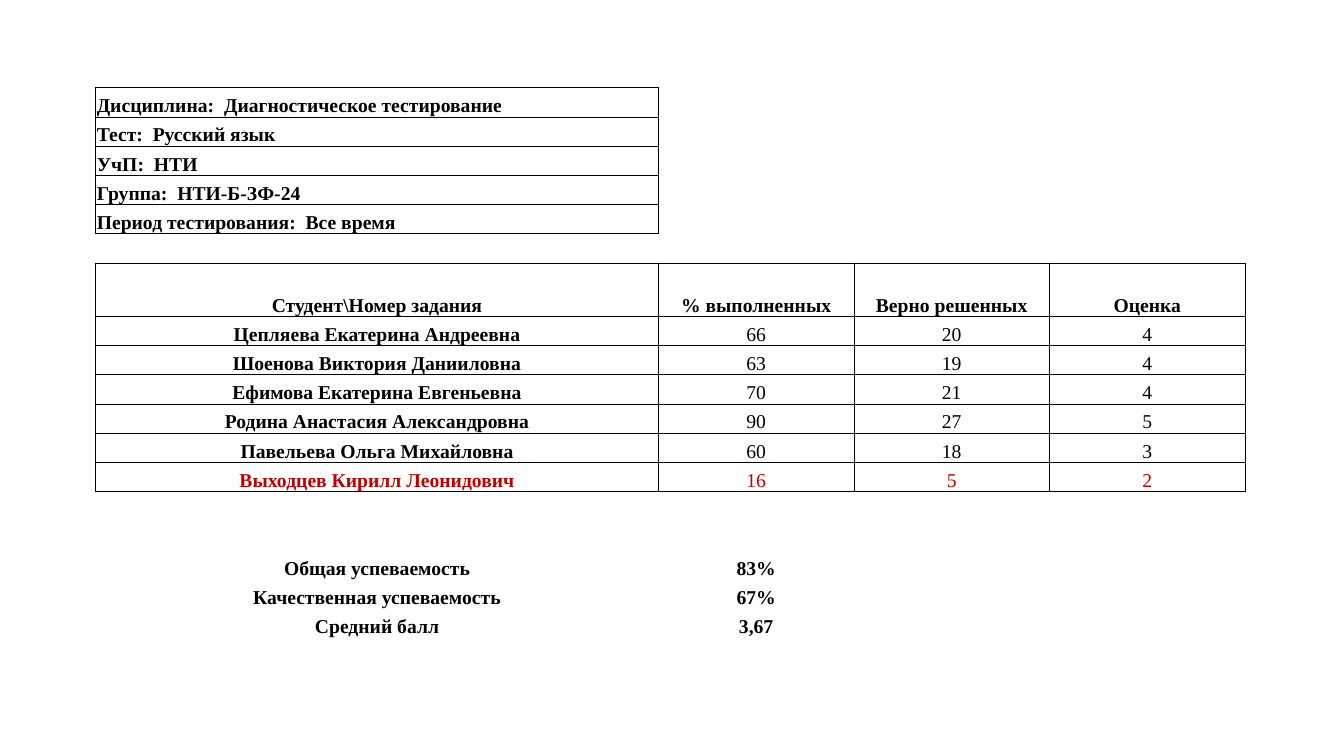
from lxml import etree
from pptx import Presentation
from pptx import util as u
from pptx.dml.color import RGBColor
from pptx.enum import text
from pptx.oxml.ns import qn

COLORS = {"ink": "000000", "fail": "C00000"}
NO_STYLE = "{2D5ABB26-0587-4C30-8999-92F81FD0307C}"
COLS = [5.58, 1.94, 1.94, 1.94]
ROW_H, HEADER_H = 0.29, 0.53
PASS_GRADE = 3

DETAILS = [
    "Дисциплина:  Диагностическое тестирование",
    "Тест:  Русский язык",
    "УчП:  НТИ",
    "Группа:  НТИ-Б-ЗФ-24",
    "Период тестирования:  Все время",
]
HEADER = ["Студент\\Номер задания", "% выполненных", "Верно решенных", "Оценка"]
STUDENTS = [
    ("Цепляева Екатерина Андреевна", 66, 20, 4),
    ("Шоенова Виктория Данииловна", 63, 19, 4),
    ("Ефимова Екатерина Евгеньевна", 70, 21, 4),
    ("Родина Анастасия Александровна", 90, 27, 5),
    ("Павельева Ольга Михайловна", 60, 18, 3),
    ("Выходцев Кирилл Леонидович", 16, 5, 2),
]
SUMMARY = [
    ("Общая успеваемость", "83%"),
    ("Качественная успеваемость", "67%"),
    ("Средний балл", "3,67"),
]
HEADER_ROW = len(DETAILS) + 1
SUMMARY_ROW = HEADER_ROW + len(STUDENTS) + 3


def is_framed(row, col):
    """Tell whether the cell belongs to one of the two ruled blocks."""
    in_details = 0 <= row < len(DETAILS) and col == 0
    in_results = HEADER_ROW <= row <= HEADER_ROW + len(STUDENTS) and 0 <= col < len(COLS)
    return in_details or in_results


class SlideBuilder:
    def __init__(self, prs, font="Times New Roman", size=14):
        self.s = prs.slides.add_slide(prs.slide_layouts[6])
        self.font, self.size = font, size

    def table(self, left, top, widths, heights):
        frame = self.s.shapes.add_table(
            len(heights), len(widths), u.Inches(left), u.Inches(top),
            u.Inches(sum(widths)), u.Inches(sum(heights)))
        tbl = frame.table
        tbl.first_row = tbl.horz_banding = False
        frame._element.find(".//" + qn("a:tableStyleId")).text = NO_STYLE
        for col, width in zip(tbl.columns, widths):
            col.width = u.Inches(width)
        for row, height in zip(tbl.rows, heights):
            row.height = u.Inches(height)
        for r in range(len(heights)):
            for c in range(len(widths)):
                self.blank_cell(tbl.cell(r, c))
                self.borders(tbl.cell(r, c), r, c)
        return tbl

    def blank_cell(self, cell):
        """Clear the fill and keep an empty line from stretching the row."""
        cell.fill.background()
        cell.margin_left = cell.margin_right = cell.margin_top = u.Inches(0.01)
        cell.margin_bottom = 0
        cell.vertical_anchor = text.MSO_ANCHOR.BOTTOM
        p = cell.text_frame.paragraphs[0]
        etree.SubElement(p._p, qn("a:endParaRPr"), sz=str(self.size * 100))

    def borders(self, cell, row, col):
        """Rule each edge that touches a framed cell."""
        sides = {"L": (0, -1), "R": (0, 1), "T": (-1, 0), "B": (1, 0)}
        tc_pr = cell._tc.get_or_add_tcPr()
        for i, (side, (dr, dc)) in enumerate(sides.items()):
            ln = etree.Element(qn("a:ln" + side), w=str(u.Pt(0.5)))
            if is_framed(row, col) or is_framed(row + dr, col + dc):
                fill = etree.SubElement(ln, qn("a:solidFill"))
                etree.SubElement(fill, qn("a:srgbClr"), val=COLORS["ink"])
            else:
                etree.SubElement(ln, qn("a:noFill"))
            tc_pr.insert(i, ln)

    def cell_text(self, cell, value, bold=True, color="ink", align=text.PP_ALIGN.CENTER):
        p = cell.text_frame.paragraphs[0]
        p.alignment = align
        r = p.add_run()
        r.text = str(value)
        r.font.name, r.font.size, r.font.bold = self.font, u.Pt(self.size), bold
        r.font.color.rgb = RGBColor.from_string(COLORS[color])


def main():
    prs = Presentation()
    prs.slide_width, prs.slide_height = u.Inches(13.33), u.Inches(7.5)
    b = SlideBuilder(prs)
    heights = [ROW_H] * (SUMMARY_ROW + len(SUMMARY))
    heights[HEADER_ROW] = HEADER_H
    tbl = b.table(0.95, 0.87, COLS, heights)

    for row, detail in enumerate(DETAILS):
        b.cell_text(tbl.cell(row, 0), detail, align=text.PP_ALIGN.LEFT)
    for col, heading in enumerate(HEADER):
        b.cell_text(tbl.cell(HEADER_ROW, col), heading)
    for row, student in enumerate(STUDENTS, HEADER_ROW + 1):
        color = "ink" if student[-1] >= PASS_GRADE else "fail"
        for col, value in enumerate(student):
            b.cell_text(tbl.cell(row, col), value, bold=col == 0, color=color)
    for row, line in enumerate(SUMMARY, SUMMARY_ROW):
        for col, value in enumerate(line):
            b.cell_text(tbl.cell(row, col), value)
    prs.save("out.pptx")


if __name__ == "__main__":
    main()
